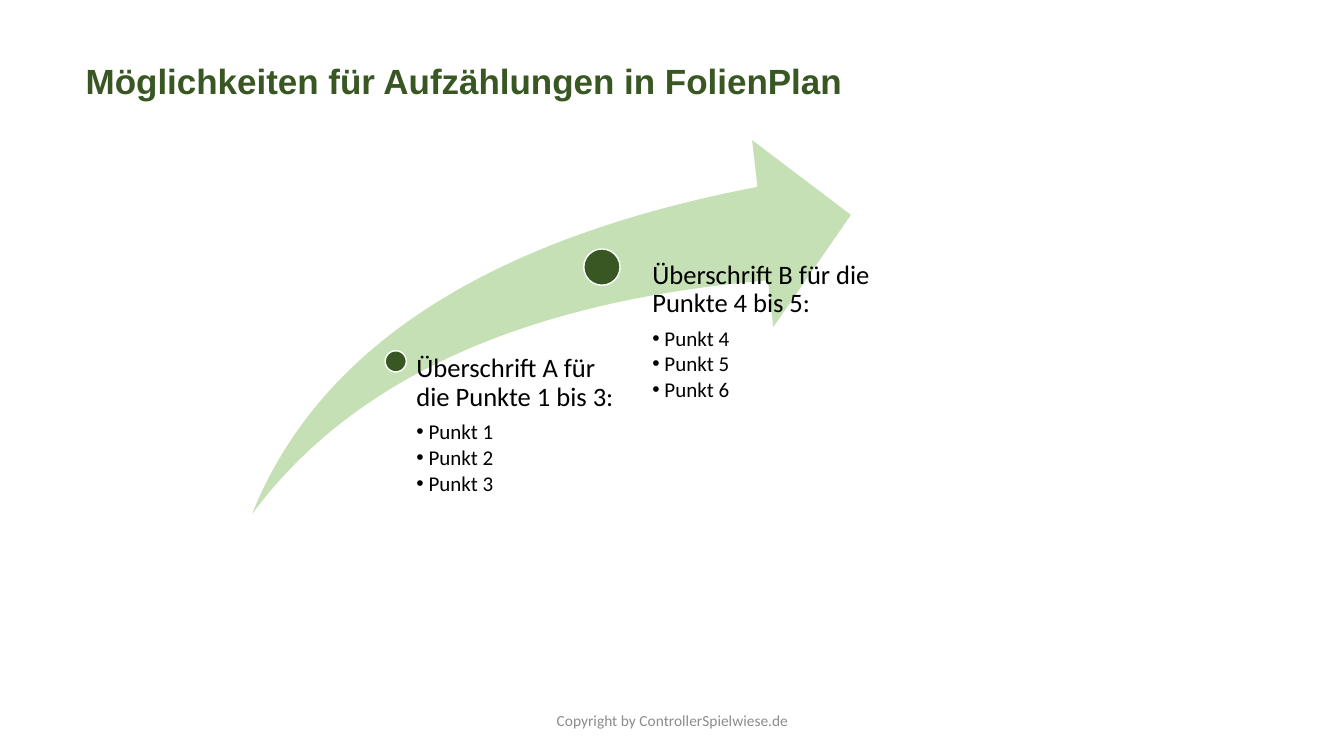
from lxml.etree import SubElement
from pptx import Presentation
from pptx.dml.color import RGBColor
from pptx.enum.shapes import MSO_SHAPE as Shape
from pptx.enum.text import MSO_ANCHOR as Anchor, MSO_AUTO_SIZE as AutoSize, PP_ALIGN as Align
from pptx.oxml.ns import qn
from pptx.util import Inches, Pt


def color(value):
    return RGBColor.from_string(value)


class Builder:
    DARK, LIGHT, WHITE, BLACK, GREY = "385723", "C5E0B4", "FFFFFF", "000000", "8C8C8C"
    HEAD_FONT, BODY_FONT = "Arial", "Calibri"
    HEAD_SIZE, ITEM_SIZE, INDENT = 19, 15, 0.12

    def __init__(self, page):
        self.page = page

    def place(self, box, left, top, width, height):
        box.left, box.top = Inches(left), Inches(top)
        box.width, box.height = Inches(width), Inches(height)

    def frame(self, box, anchor):
        frame = box.text_frame
        frame.word_wrap = True
        frame.auto_size = AutoSize.NONE
        frame.vertical_anchor = anchor
        return frame

    def span(self, para, text, size, shade, font=BODY_FONT, bold=False):
        span = para.add_run()
        span.text = text
        span.font.name, span.font.size, span.font.bold = font, Pt(size), bold
        span.font.color.rgb = color(shade)

    def title(self, text, *area):
        box = self.page.shapes.title
        self.place(box, *area)
        para = self.frame(box, Anchor.MIDDLE).paragraphs[0]
        para.alignment = Align.LEFT
        self.span(para, text, 25, self.DARK, self.HEAD_FONT, True)

    def footer(self, text, *area):
        box = self.page.shapes.add_textbox(*map(Inches, area))
        para = self.frame(box, Anchor.MIDDLE).paragraphs[0]
        para.alignment = Align.CENTER
        self.span(para, text, 11, self.GREY)

    def shape(self, kind, fill, area, outline=None):
        shape = self.page.shapes.add_shape(kind, *map(Inches, area))
        shape.shadow.inherit = False
        shape.fill.solid()
        shape.fill.fore_color.rgb = color(fill)
        if outline:
            shape.line.color.rgb = color(outline)
            shape.line.width = Pt(1)
        else:
            shape.line.fill.background()
        return shape

    def arrow(self, *area):
        arrow = self.shape(Shape.SWOOSH_ARROW, self.LIGHT, area)
        arrow.adjustments[0] = arrow.adjustments[1] = 0.25

    def dot(self, left, top, size):
        self.shape(Shape.OVAL, self.DARK, (left, top, size, size), self.WHITE)

    def list_para(self, para, text, size, gap, bullet):
        props = para._p.get_or_add_pPr()
        indent = Inches(self.INDENT) if bullet else 0
        props.set("marL", str(indent))
        props.set("indent", str(-indent))
        if bullet:
            para.level = 1
            SubElement(props, qn("a:buFont"), typeface="Arial")
            SubElement(props, qn("a:buChar"), char="•")
        else:
            SubElement(props, qn("a:buNone"))
        para.alignment = Align.LEFT
        para.line_spacing = 0.9
        para.space_before = Pt(0)
        para.space_after = Pt(size * gap)
        self.span(para, text, size, self.BLACK)

    def bullet_list(self, index, heading, items, inset, *area):
        box = self.page.placeholders[index]
        self.place(box, *area)
        # Bring the list in front of the arrow
        box.element.getparent().append(box.element)
        frame = self.frame(box, Anchor.TOP)
        frame.margin_left = Inches(inset)
        frame.margin_top = frame.margin_right = frame.margin_bottom = 0
        self.list_para(frame.paragraphs[0], heading, self.HEAD_SIZE, 0.35, False)
        for item in items:
            self.list_para(frame.add_paragraph(), item, self.ITEM_SIZE, 0.15, True)


def main():
    deck = Presentation()
    deck.slide_width, deck.slide_height = Inches(13.33), Inches(7.5)
    two_content = deck.slide_layouts[3]
    builder = Builder(deck.slides.add_slide(two_content))

    # Title and footer
    builder.title("Möglichkeiten für Aufzählungen in FolienPlan", 0.75, 0.54, 9.43, 0.52)
    builder.footer("Copyright by ControllerSpielwiese.de", 4.42, 6.95, 4.5, 0.4)

    # Rising arrow with two stations
    builder.arrow(2.5, 1.39, 5.94, 3.71)
    builder.dot(3.82, 3.48, 0.21)
    builder.bullet_list(1, "Überschrift A für die Punkte 1 bis 3:",
                        [f"Punkt {n}" for n in range(1, 4)], 0.11, 4.02, 3.52, 2.13, 1.59)
    builder.dot(5.79, 2.47, 0.36)
    builder.bullet_list(2, "Überschrift B für die Punkte 4 bis 5:",
                        [f"Punkt {n}" for n in range(4, 7)], 0.19, 6.28, 2.59, 2.64, 2.46)

    deck.save("out.pptx")


if __name__ == "__main__":
    main()
